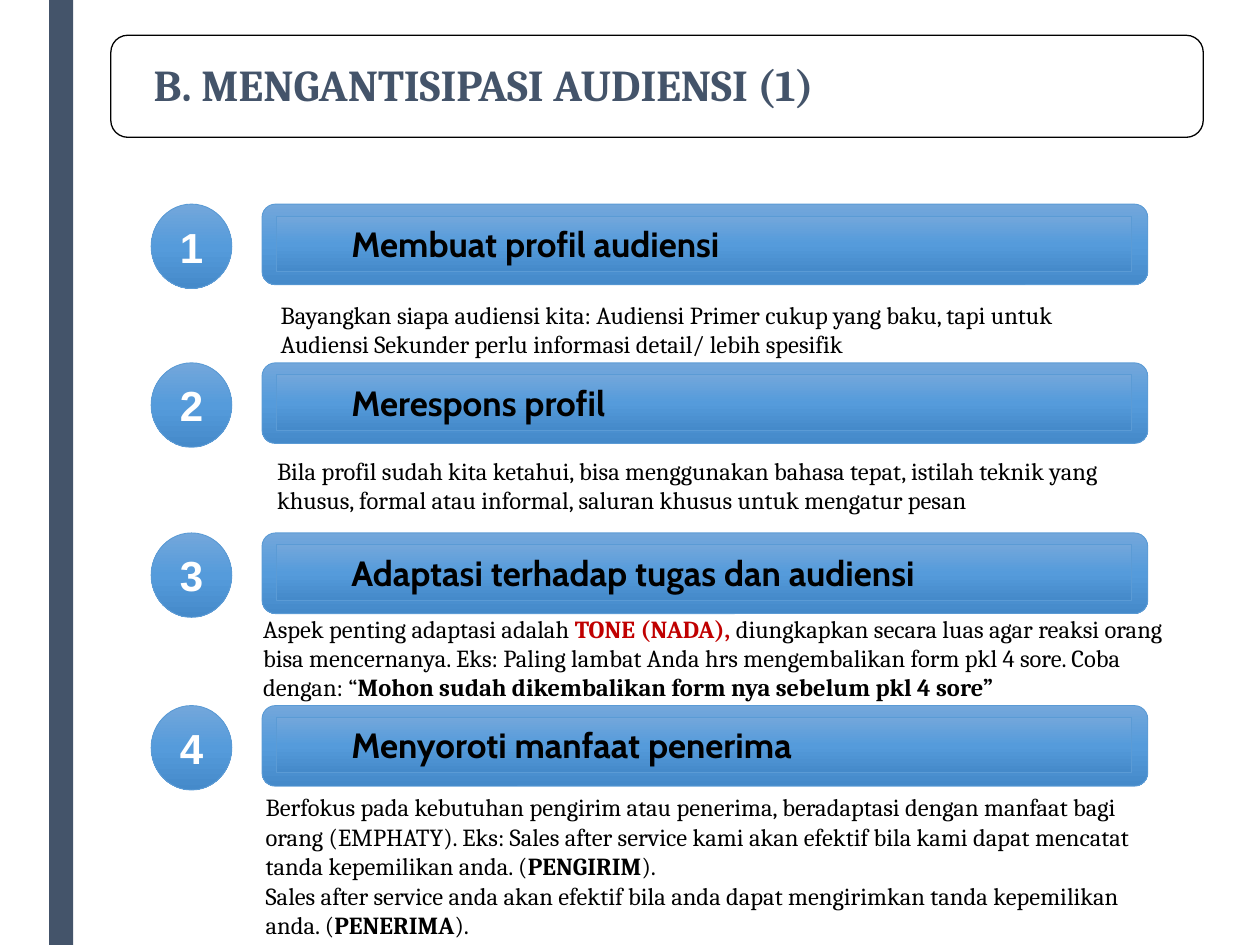
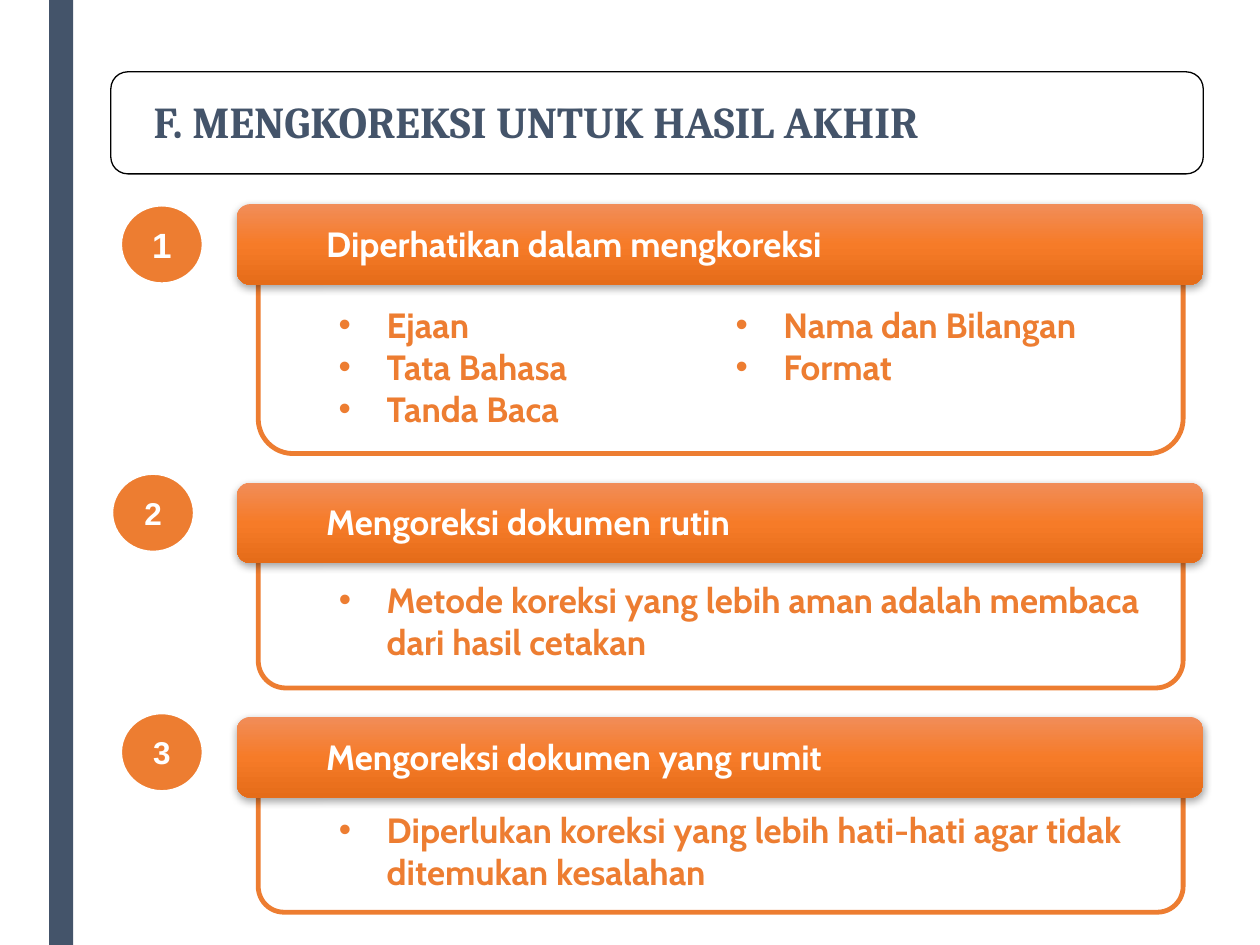
from dataclasses import dataclass

from pptx import Presentation
from pptx.dml.color import RGBColor
from pptx.enum.shapes import MSO_SHAPE
from pptx.enum.text import MSO_ANCHOR, MSO_AUTO_SIZE, PP_ALIGN
from pptx.oxml import parse_xml
from pptx.oxml.ns import nsdecls, qn
from pptx.util import Inches, Pt

SLIDE_WIDTH, SLIDE_HEIGHT = Inches(10), Inches(7.5)
COLUMN, ROW = SLIDE_WIDTH / 100, SLIDE_HEIGHT / 75

SLATE, BLACK, WHITE, RED = "44546A", "000000", "FFFFFF", "C00000"
BLUE, ORANGE = "5B9BD5", "ED7D31"
BLUE_GRADIENT = ("73A7DB", "559BDB", "458ACA")
ORANGE_GRADIENT = ("F18D59", "F67B28", "E56C19")
TITLE_FONT, HEADING_FONT, NUMBER_FONT = "Cambria", "Cabin", "Arial"


@dataclass
class Box:
    left: float
    top: float
    width: float
    height: float

    def inside(self, left, top, width, height):
        return Box(self.left + left, self.top + top, width, height)

    def lengths(self):
        return (round(self.left * COLUMN), round(self.top * ROW),
                round(self.width * COLUMN), round(self.height * ROW))


def color(value):
    return RGBColor.from_string(value)


def set_font(font, name, size, value, bold=False):
    font.name = name
    font.size = Pt(size)
    font.bold = bold
    font.color.rgb = color(value)


def fill_gradient(shape, values):
    shape.fill.gradient()
    shape.fill.gradient_angle = 270
    stops = shape.element.spPr.find(".//" + qn("a:gsLst"))
    for stop in list(stops):
        stops.remove(stop)
    for index, value in enumerate(values):
        stops.append(parse_xml(
            f'<a:gs {nsdecls("a")} pos="{index * 50000}"><a:srgbClr val="{value}"/></a:gs>'))


def add_soft_shadow(shape):
    shape.element.spPr.find(qn("a:effectLst")).append(parse_xml(
        f'<a:outerShdw {nsdecls("a")} blurRad="{Pt(4.5)}" dist="{Pt(1.5)}" dir="5400000" '
        'algn="ctr" rotWithShape="0"><a:srgbClr val="000000"><a:alpha val="35000"/>'
        '</a:srgbClr></a:outerShdw>'))


def add_panel(shapes, kind, box, fill=None, line=None, line_width=0.5):
    shape = shapes.add_shape(kind, *box.lengths())
    shape.shadow.inherit = False
    if fill is None:
        shape.fill.background()
    elif isinstance(fill, tuple):
        fill_gradient(shape, fill)
    else:
        shape.fill.solid()
        shape.fill.fore_color.rgb = color(fill)
    if line is None:
        shape.line.fill.background()
    else:
        shape.line.color.rgb = color(line)
        shape.line.width = Pt(line_width)
    return shape


def add_text_box(shapes, box):
    frame = shapes.add_textbox(*box.lengths()).text_frame
    frame.word_wrap = True
    return frame


def add_paragraphs(frame, count):
    return [frame.paragraphs[0]] + [frame.add_paragraph() for _ in range(count - 1)]


def indent(paragraph, left, first=0.0):
    properties = paragraph._p.get_or_add_pPr()
    properties.set("marL", str(Inches(left)))
    properties.set("indent", str(Inches(first)))
    return properties


def write_heading(frame, text, value):
    frame.word_wrap = True
    frame.vertical_anchor = MSO_ANCHOR.TOP
    paragraph = frame.paragraphs[0]
    paragraph.text = text
    paragraph.alignment = PP_ALIGN.LEFT
    indent(paragraph, 0.5)
    set_font(paragraph.font, HEADING_FONT, 20, value, True)


def write_bullets(frame, items):
    for paragraph, item in zip(add_paragraphs(frame, len(items)), items):
        paragraph.text = item
        properties = indent(paragraph, 0.88, -0.38)
        properties.append(parse_xml(f'<a:buFont {nsdecls("a")} typeface="Arial"/>'))
        properties.append(parse_xml(f'<a:buChar {nsdecls("a")} char="•"/>'))
        set_font(paragraph.font, HEADING_FONT, 20, ORANGE, True)


def write_explanation(frame, paragraphs):
    for paragraph, pieces in zip(add_paragraphs(frame, len(paragraphs)), paragraphs):
        set_font(paragraph.font, TITLE_FONT, 14, BLACK)
        for text, value in pieces:
            run = paragraph.add_run()
            run.text = text
            if value:
                run.font.bold = True
                run.font.color.rgb = color(value)


def add_number(shapes, box, number, size, fill, line, line_width):
    circle = add_panel(shapes, MSO_SHAPE.FLOWCHART_CONNECTOR, box, fill, line, line_width)
    circle.text_frame.vertical_anchor = MSO_ANCHOR.MIDDLE
    paragraph = circle.text_frame.paragraphs[0]
    paragraph.text = str(number)
    paragraph.alignment = PP_ALIGN.CENTER
    set_font(paragraph.font, NUMBER_FONT, size, WHITE, True)


def add_master_band(presentation, slide):
    band = add_panel(slide.shapes, MSO_SHAPE.RECTANGLE, Box(3.9, 0, 1.9, 75), SLATE)
    presentation.slide_master.shapes.element.append(band.element)


def add_titled_slide(presentation, text, top):
    slide = presentation.slides.add_slide(presentation.slide_layouts.get_by_name("Title Only"))
    frame_box = Box(8.8, top, 86.7, 8.1)
    add_panel(slide.shapes, MSO_SHAPE.ROUNDED_RECTANGLE, frame_box, line=BLACK, line_width=0.75)
    title = slide.shapes.title
    title.left, title.top, title.width, title.height = frame_box.inside(
        2.4, 1.8, 78.8, 4.7).lengths()
    title.text_frame.word_wrap = True
    title.text_frame.auto_size = MSO_AUTO_SIZE.NONE
    title.text_frame.vertical_anchor = MSO_ANCHOR.MIDDLE
    paragraph = title.text_frame.paragraphs[0]
    paragraph.text = text
    paragraph.alignment = PP_ALIGN.LEFT
    paragraph.line_spacing = 0.89
    set_font(paragraph.font, TITLE_FONT, 25.2, SLATE, True)
    return slide


def add_audience_step(slide, box, number, heading, explanation_box, explanation):
    shapes = slide.shapes.add_group_shape().shapes
    add_panel(shapes, MSO_SHAPE.ROUNDED_RECTANGLE, box.inside(8.8, 0, 70.3, 6.4),
              BLUE_GRADIENT, BLUE)
    label = add_panel(shapes, MSO_SHAPE.RECTANGLE, box.inside(9.9, 0.95, 67.9, 4.4),
                      BLUE_GRADIENT, BLUE)
    write_heading(label.text_frame, heading, BLACK)
    add_number(shapes, box.inside(0, 0, 6.4, 6.7), number, 24, BLUE_GRADIENT, BLUE, 0.5)
    write_explanation(add_text_box(slide.shapes, box.inside(*explanation_box)), explanation)


def add_correction_block(slide, box, number, number_place, number_size, heading, lists):
    shapes = slide.shapes.add_group_shape().shapes
    add_panel(shapes, MSO_SHAPE.ROUNDED_RECTANGLE,
              box.inside(1.7, 3.25, 73.4, box.height - 3.25), WHITE, ORANGE, 2.75)
    header = add_panel(shapes, MSO_SHAPE.ROUNDED_RECTANGLE,
                       box.inside(0, 0, box.width, 6.4), ORANGE_GRADIENT)
    add_soft_shadow(header)
    write_heading(add_text_box(shapes, box.inside(1.1, 0.95, 65, 4.4)), heading, WHITE)
    for list_box, items in lists:
        write_bullets(add_text_box(shapes, box.inside(*list_box)), items)
    add_number(shapes, box.inside(*number_place, 6.7, 6.4), number, number_size,
               ORANGE, WHITE, 2.75)


AUDIENCE_STEPS = [
    (16.2, "Membuat profil audiensi", (9.3, 7.1, 70, 5.7), [[
        ("Bayangkan siapa audiensi kita: Audiensi Primer cukup yang baku, tapi untuk "
         "Audiensi Sekunder perlu informasi detail/ lebih spesifik", None)]]),
    (28.8, "Merespons profil", (9, 6.9, 70.1, 5.7), [[
        ("Bila profil sudah kita ketahui, bisa menggunakan bahasa tepat, istilah teknik yang "
         "khusus, formal atau informal, saluran khusus untuk mengatur pesan", None)]]),
    (42.3, "Adaptasi terhadap tugas dan audiensi", (7.9, 5.9, 73.4, 8.1), [[
        ("Aspek penting adaptasi adalah ", None),
        ("TONE (NADA), ", RED),
        ("diungkapkan secara luas agar reaksi orang bisa mencernanya. Eks: Paling lambat Anda "
         "hrs mengembalikan form pkl 4 sore. Coba dengan: “", None),
        ("Mohon sudah dikembalikan form nya sebelum pkl 4 sore”", BLACK)]]),
    (56, "Menyoroti manfaat penerima", (8.1, 6.4, 73.1, 12.8), [
        [("Berfokus pada kebutuhan pengirim atau penerima, beradaptasi dengan manfaat bagi "
          "orang (EMPHATY). Eks: Sales after service kami akan efektif bila kami dapat "
          "mencatat tanda kepemilikan anda. (", None),
         ("PENGIRIM", BLACK), (").", None)],
        [("Sales after service anda akan efektif bila anda dapat mengirimkan tanda "
          "kepemilikan anda. (", None),
         ("PENERIMA", BLACK), (").", None)]]),
]

CORRECTION_BLOCKS = [
    (16.2, 19.8, (-9.3, 0), 20, "Diperhatikan dalam mengkoreksi", [
        ((2.1, 7.4, 31, 11.1), ["Ejaan", "Tata Bahasa", "Tanda Baca"]),
        ((33.6, 7.4, 37.6, 7.7), ["Nama dan Bilangan", "Format"])]),
    (38.3, 16.3, (-10, -0.8), 18, "Mengoreksi dokumen rutin", [
        ((2.1, 7.1, 70.9, 11.1),
         ["Metode koreksi yang lebih aman adalah membaca dari hasil cetakan"])]),
    (56.9, 15.5, (-9.3, -0.4), 18, "Mengoreksi dokumen yang rumit", [
        ((2.1, 6.8, 70.9, 11.1),
         ["Diperlukan koreksi yang lebih hati-hati agar tidak ditemukan kesalahan"])]),
]


def main():
    presentation = Presentation()
    presentation.slide_width, presentation.slide_height = SLIDE_WIDTH, SLIDE_HEIGHT

    audience = add_titled_slide(presentation, "B. MENGANTISIPASI AUDIENSI (1)", 2.8)
    add_master_band(presentation, audience)
    for number, (top, *content) in enumerate(AUDIENCE_STEPS, 1):
        add_audience_step(audience, Box(12, top, 79.1, 6.7), number, *content)

    correction = add_titled_slide(presentation, "F. MENGKOREKSI UNTUK HASIL AKHIR", 5.7)
    for number, (top, height, *content) in enumerate(CORRECTION_BLOCKS, 1):
        add_correction_block(correction, Box(18.8, top, 76.7, height), number, *content)

    presentation.save("out.pptx")


if __name__ == "__main__":
    main()
